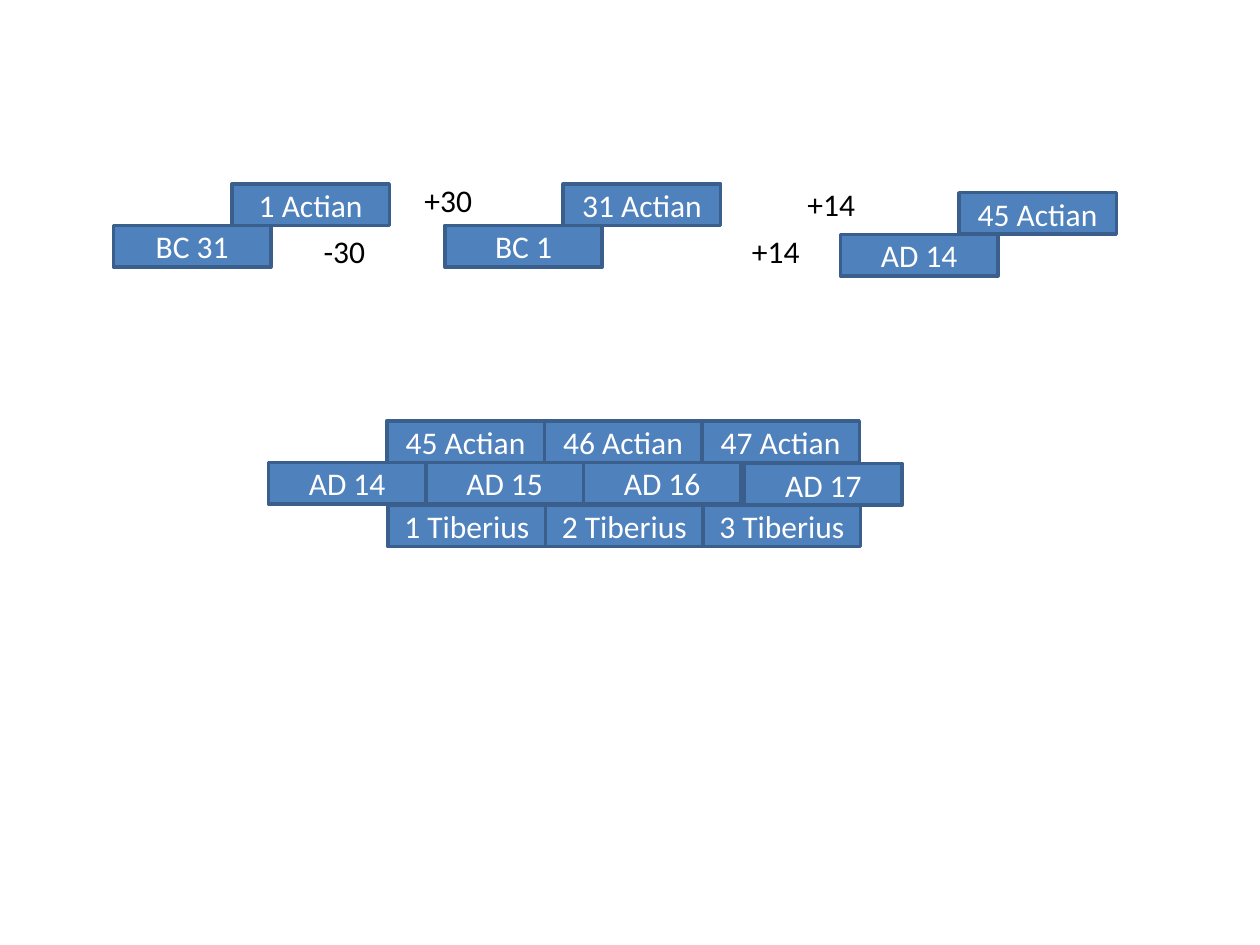
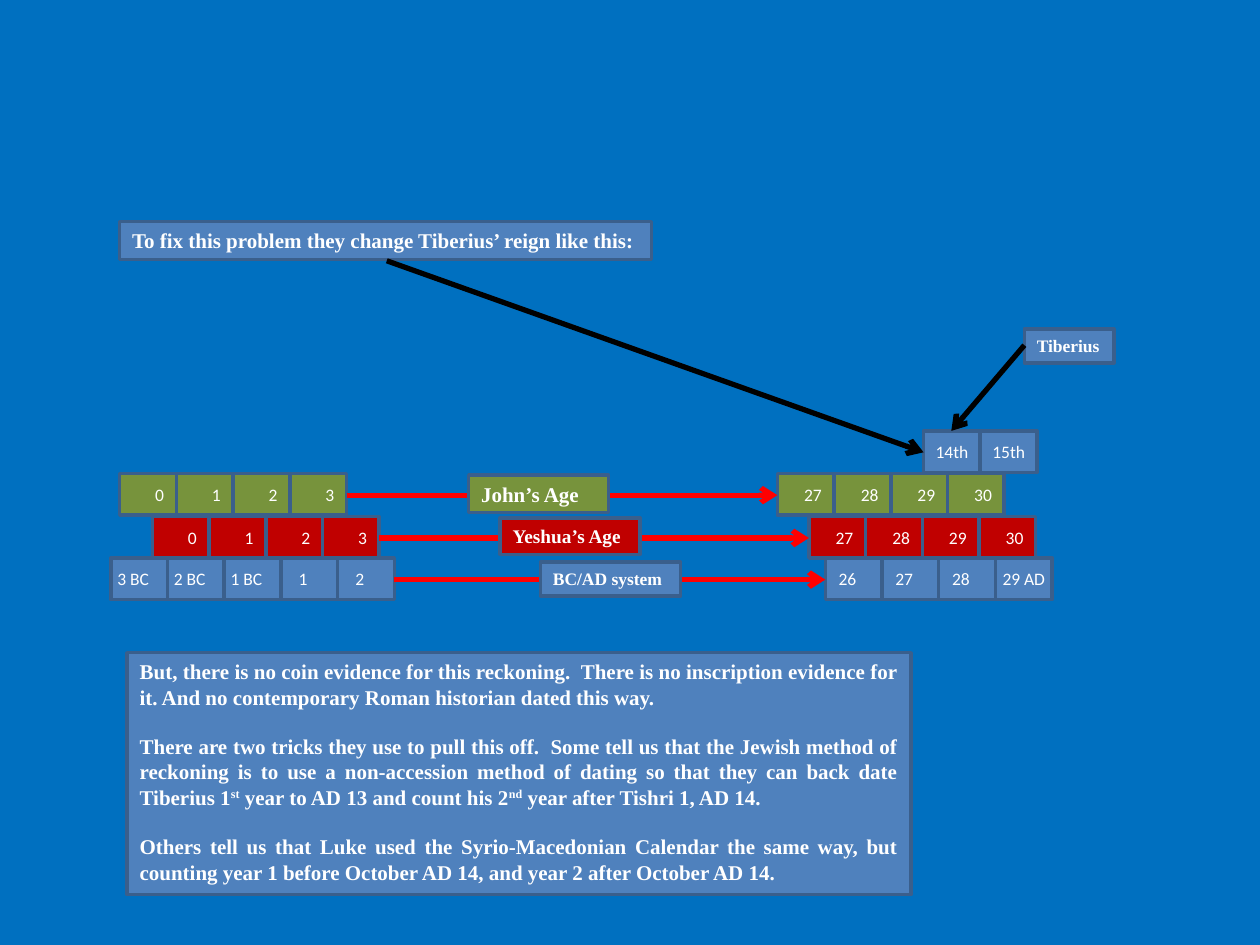
from dataclasses import dataclass

from lxml import etree
from pptx import Presentation
from pptx import util as u
from pptx.dml.color import RGBColor
from pptx.enum import shapes, text
from pptx.oxml.ns import qn
from pptx.shapes.base import BaseShape
from pptx.slide import Slide

EMU_PER_PX = 9144  # 100 px to the inch

BLUE, OUTLINE, WHITE, BLACK = "4F81BD", "3A5F8C", "FFFFFF", "000000"
GREEN, CRIMSON, RED, SEA = "77933C", "C00000", "FF0000", "0070C0"
SANS, SERIF = "Calibri", "Times New Roman"
CENTER, RIGHT = text.PP_ALIGN.CENTER, text.PP_ALIGN.RIGHT
LEFT, JUSTIFY = text.PP_ALIGN.LEFT, text.PP_ALIGN.JUSTIFY

YEAR_W, YEAR_H = 125, 33
CELL_W = 45


@dataclass(frozen=True)
class Box:
    left: int
    top: int
    width: int
    height: int


@dataclass(frozen=True)
class Style:
    size: int
    font: str = SANS
    bold: bool = False
    color: str = WHITE
    align: text.PP_ALIGN = CENTER
    anchor: text.MSO_ANCHOR = text.MSO_ANCHOR.MIDDLE
    inset_left: int = 10
    inset_right: int = 10
    gap: int = 0


@dataclass(frozen=True)
class Timeline:
    """Two runs of years joined by an arrow that carries a label."""
    top: int
    fill: str
    first_left: int
    first_years: list[str]
    last_left: int
    last_years: list[str]
    align: text.PP_ALIGN
    label: str
    label_box: Box
    label_size: int


YEAR = Style(18)
STEP = Style(18, color=BLACK, align=LEFT, anchor=text.MSO_ANCHOR.TOP)


def px(length: int) -> u.Emu:
    return u.Emu(length * EMU_PER_PX)


def rgb(hex_color: str) -> RGBColor:
    return RGBColor.from_string(hex_color)


def note(size: int, gap: int = 0) -> Style:
    return Style(size, SERIF, True, align=JUSTIFY,
                 anchor=text.MSO_ANCHOR.TOP, gap=gap)


def cell(align: text.PP_ALIGN, inset_right: int = 10) -> Style:
    return Style(10, align=align, inset_left=0, inset_right=inset_right)


def write(shape: BaseShape, paragraphs: list[str], style: Style) -> None:
    """Fill a shape with text; parts between ^ marks are superscript."""
    frame = shape.text_frame
    frame.word_wrap = True
    frame.vertical_anchor = style.anchor
    frame.margin_left, frame.margin_right = px(style.inset_left), px(style.inset_right)
    frame.margin_top = frame.margin_bottom = px(5)
    for index, words in enumerate(paragraphs):
        paragraph = frame.add_paragraph() if index else frame.paragraphs[0]
        paragraph.alignment = style.align
        if index and style.gap:
            paragraph.space_before = u.Pt(style.gap)
        for part, piece in enumerate(words.split("^")):
            run = paragraph.add_run()
            run.text = piece
            run.font.name, run.font.size = style.font, u.Pt(style.size)
            run.font.bold = style.bold
            run.font.color.rgb = rgb(style.color)
            if part % 2:
                run.font._element.set("baseline", "30000")


def add_box(slide: Slide, box: Box, paragraphs: list[str], style: Style,
            fill: str = BLUE) -> None:
    shape = slide.shapes.add_shape(
        shapes.MSO_SHAPE.RECTANGLE,
        px(box.left), px(box.top), px(box.width), px(box.height))
    shape.shadow.inherit = False
    shape.fill.solid()
    shape.fill.fore_color.rgb = rgb(fill)
    shape.line.color.rgb = rgb(OUTLINE)
    shape.line.width = u.Pt(2)
    write(shape, paragraphs, style)


def add_strip(slide: Slide, left: int, top: int, width: int,
              years: list[str], style: Style, fill: str = BLUE) -> int:
    """Draw years side by side and return the right edge."""
    for index, year in enumerate(years):
        add_box(slide, Box(left + index * width, top, width, YEAR_H),
                [year], style, fill)
    return left + len(years) * width


def add_step(slide: Slide, left: int, top: int, words: str) -> None:
    write(slide.shapes.add_textbox(px(left), px(top), px(80), px(40)), [words], STEP)


def add_arrow(slide: Slide, start: tuple[int, int], end: tuple[int, int],
              color: str) -> None:
    arrow = slide.shapes.add_connector(
        shapes.MSO_CONNECTOR.STRAIGHT, *map(px, start + end))
    arrow.line.color.rgb = rgb(color)
    arrow.line.width = u.Pt(3)
    etree.SubElement(arrow.line._get_or_add_ln(), qn("a:tailEnd"), type="arrow")
    etree.SubElement(arrow._element.spPr, qn("a:effectLst"))


def add_timeline(slide: Slide, line: Timeline) -> None:
    style = cell(line.align)
    middle = line.top + YEAR_H // 2 + 1
    first_end = add_strip(slide, line.first_left, line.top, CELL_W,
                          line.first_years, style, line.fill)
    add_strip(slide, line.last_left, line.top, CELL_W,
              line.last_years, style, line.fill)
    add_arrow(slide, (first_end, middle), (line.last_left, middle), RED)
    add_box(slide, line.label_box, [line.label], note(line.label_size), line.fill)


def new_slide(deck: Presentation, background: str) -> Slide:
    slide = deck.slides.add_slide(deck.slide_layouts[6])
    slide.background.fill.solid()
    slide.background.fill.fore_color.rgb = rgb(background)
    return slide


def build_actian_slide(deck: Presentation) -> None:
    slide = new_slide(deck, WHITE)

    # Matching years, each era year overlapping its Actian year
    for left, top, era_year, actian_year in [
            (90, 179, "BC 31", "1 Actian"),
            (353, 179, "BC 1", "31 Actian"),
            (667, 186, "AD 14", "45 Actian")]:
        add_strip(slide, left, top, YEAR_W, [era_year], YEAR)
        add_strip(slide, left + 94, top - YEAR_H, YEAR_W, [actian_year], YEAR)

    # Years counted between the pairs
    for left, top, words in [(327, 139, "+30"), (247, 179, "-30"),
                             (587, 179, "+14"), (631, 142, "+14")]:
        add_step(slide, left, top, words)

    # Actian, AD and Tiberius years in three rows
    for left, top, years in [
            (307, 334, ["45 Actian", "46 Actian", "47 Actian"]),
            (213, 367, ["AD 14", "AD 15", "AD 16"]),
            (591, 368, ["AD 17"]),
            (308, 401, ["1 Tiberius", "2 Tiberius", "3 Tiberius"])]:
        add_strip(slide, left, top, YEAR_W, years, YEAR)


def build_tiberius_slide(deck: Presentation) -> None:
    slide = new_slide(deck, SEA)
    first_ages, last_ages = ["0", "1", "2", "3"], ["27", "28", "29", "30"]

    # Ages set against the calendar
    for line in [
            Timeline(443, BLUE, 88, ["3 BC", "2 BC", "1 BC", "1", "2"],
                     655, ["26", "27", "28"], CENTER,
                     "BC/AD system", Box(429, 446, 111, 27), 10),
            Timeline(410, CRIMSON, 121, first_ages, 642, last_ages, RIGHT,
                     "Yeshua’s Age", Box(397, 411, 111, 29), 11),
            Timeline(376, GREEN, 95, first_ages, 617, last_ages, RIGHT,
                     "John’s Age", Box(372, 377, 111, 30), 12)]:
        add_timeline(slide, line)
    full_cell = cell(CENTER, inset_right=0)
    add_strip(slide, 790, 443, CELL_W, ["29 AD"], full_cell)

    # Years of Tiberius' reign and what points at them
    add_strip(slide, 733, 342, CELL_W, ["14th", "15th"], full_cell)
    add_box(slide, Box(813, 261, 71, 27), ["Tiberius"], note(10))
    add_box(slide, Box(95, 176, 422, 30),
            ["To fix this problem they change Tiberius’ reign like this:"], note(12))
    add_arrow(slide, (813, 274), (755, 342), BLACK)
    add_arrow(slide, (307, 207), (733, 359), BLACK)

    # Objections
    add_box(slide, Box(101, 518, 622, 192), [
        "But, there is no coin evidence for this reckoning.  There is no "
        "inscription evidence for it. And no contemporary Roman historian "
        "dated this way.",
        "There are two tricks they use to pull this off.  Some tell us that "
        "the Jewish method of reckoning is to use a non-accession method of "
        "dating so that they can back date Tiberius 1^st^ year to AD 13 and "
        "count his 2^nd^ year after Tishri 1, AD 14.",
        "Others tell us that Luke used the Syrio-Macedonian Calendar the same "
        "way, but counting year 1 before October AD 14, and year 2 after "
        "October AD 14."], note(12, gap=14))


def main() -> None:
    deck = Presentation()
    deck.slide_width, deck.slide_height = px(1000), px(750)
    build_actian_slide(deck)
    build_tiberius_slide(deck)
    deck.save("out.pptx")


if __name__ == "__main__":
    main()
